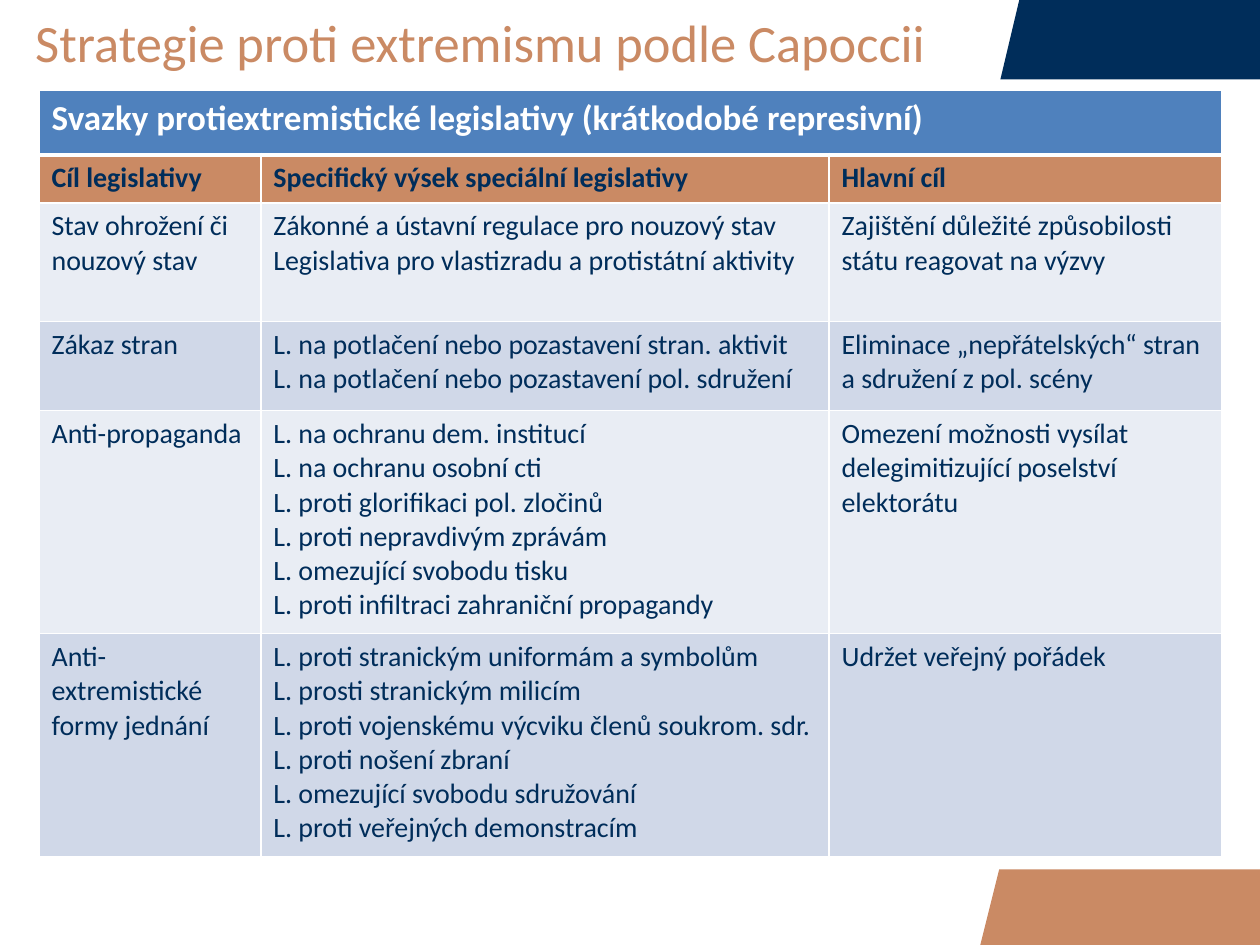
from dataclasses import dataclass

from lxml.etree import SubElement
from pptx import Presentation
from pptx.dml.color import RGBColor
from pptx.enum.text import MSO_ANCHOR as Anchor
from pptx.oxml.ns import qn
from pptx.util import Inches, Pt

FONT = "Calibri"
NAVY, COPPER, WHITE, BLUE = "002D5A", "CA8A64", "FFFFFF", "4F81BD"
BANDS = ("E9EDF4", "D0D8E8")
SLIDE_WIDTH, SLIDE_HEIGHT = 10, 7.5


@dataclass(frozen=True)
class CornerBand:
    left: float
    top: float
    height: float
    color: str
    slant: float = 0.15


@dataclass(frozen=True)
class TextStyle:
    size: float
    color: str
    bold: bool = False


@dataclass(frozen=True)
class LegislationRow:
    height: float
    target: str
    laws: tuple[str, ...]
    goal: str


CORNER_BANDS = (
    CornerBand(7.94, 0, 0.63, NAVY),
    CornerBand(7.78, 6.9, 0.6, COPPER),
)
TITLE_STYLE = TextStyle(30, COPPER)
BANNER_STYLE = TextStyle(20, WHITE, bold=True)
HEADING_STYLE = TextStyle(16, NAVY, bold=True)
BODY_STYLE = TextStyle(16, NAVY)

TITLE = "Strategie proti extremismu podle Capoccii"
BANNER = "Svazky protiextremistické legislativy (krátkodobé represivní)"
HEADINGS = ("Cíl legislativy", "Specifický výsek speciální legislativy", "Hlavní cíl")
COLUMN_WIDTHS = (1.76, 4.51, 3.12)
BANNER_HEIGHT, HEADING_HEIGHT = 0.51, 0.38
ROWS = (
    LegislationRow(
        0.94,
        "Stav ohrožení či nouzový stav",
        (
            "Zákonné a ústavní regulace pro nouzový stav",
            "Legislativa pro vlastizradu a protistátní aktivity",
        ),
        "Zajištění důležité způsobilosti státu reagovat na výzvy",
    ),
    LegislationRow(
        0.71,
        "Zákaz stran",
        (
            "L. na potlačení nebo pozastavení stran. aktivit",
            "L. na potlačení nebo pozastavení pol. sdružení",
        ),
        "Eliminace „nepřátelských“ stran a sdružení z pol. scény",
    ),
    LegislationRow(
        1.77,
        "Anti-propaganda",
        (
            "L. na ochranu dem. institucí",
            "L. na ochranu osobní cti",
            "L. proti glorifikaci pol. zločinů",
            "L. proti nepravdivým zprávám",
            "L. omezující svobodu tisku",
            "L. proti infiltraci zahraniční propagandy",
        ),
        "Omezení možnosti vysílat delegimitizující poselství elektorátu",
    ),
    LegislationRow(
        1.77,
        "Anti-extremistické formy jednání",
        (
            "L. proti stranickým uniformám a symbolům",
            "L. prosti stranickým milicím",
            "L. proti vojenskému výcviku členů soukrom. sdr.",
            "L. proti nošení zbraní",
            "L. omezující svobodu sdružování",
            "L. proti veřejných demonstracím",
        ),
        "Udržet veřejný pořádek",
    ),
)


def set_color(color_format, color: str) -> None:
    color_format.rgb = RGBColor.from_string(color)


def write_lines(text_frame, lines: tuple[str, ...], style: TextStyle) -> None:
    """Write one paragraph per line into an empty text frame."""
    for index, line in enumerate(lines):
        paragraph = text_frame.add_paragraph() if index else text_frame.paragraphs[0]
        run = paragraph.add_run()
        run.text = line
        run.font.name = FONT
        run.font.size = Pt(style.size)
        run.font.bold = style.bold
        set_color(run.font.color, style.color)


def draw_corner_band(slide, band: CornerBand) -> None:
    bottom = band.top + band.height
    builder = slide.shapes.build_freeform(Inches(band.left), Inches(bottom))
    corners = (
        (band.left + band.slant, band.top),
        (SLIDE_WIDTH, band.top),
        (SLIDE_WIDTH, bottom),
    )
    builder.add_line_segments([(Inches(x), Inches(y)) for x, y in corners])
    shape = builder.convert_to_shape()
    shape.shadow.inherit = False
    shape.fill.solid()
    set_color(shape.fill.fore_color, band.color)
    shape.line.fill.background()


def draw_title(slide) -> None:
    box = slide.shapes.add_textbox(0, 0, Inches(SLIDE_WIDTH), Inches(0.66))
    frame = box.text_frame
    frame.word_wrap = True
    frame.vertical_anchor = Anchor.MIDDLE
    frame.margin_left = frame.margin_right = Inches(0.28)
    write_lines(frame, (TITLE,), TITLE_STYLE)


def set_borders(cell, top: float = 1, bottom: float = 1) -> None:
    """Give the cell white borders; widths are in points."""
    properties = cell._tc.get_or_add_tcPr()
    for side, width in (("L", 1), ("R", 1), ("T", top), ("B", bottom)):
        line = SubElement(properties, qn(f"a:ln{side}"), w=str(Pt(width)))
        fill = SubElement(line, qn("a:solidFill"))
        SubElement(fill, qn("a:srgbClr"), val=WHITE)


def fill_cell(cell, color: str) -> None:
    cell.fill.solid()
    set_color(cell.fill.fore_color, color)


def draw_table(slide) -> None:
    heights = (BANNER_HEIGHT, HEADING_HEIGHT, *(row.height for row in ROWS))
    table = slide.shapes.add_table(
        len(heights), len(COLUMN_WIDTHS), Inches(0.31), Inches(0.72),
        Inches(sum(COLUMN_WIDTHS)), Inches(sum(heights)),
    ).table
    for column, width in zip(table.columns, COLUMN_WIDTHS):
        column.width = Inches(width)
    for row, height in zip(table.rows, heights):
        row.height = Inches(height)

    banner = table.cell(0, 0)
    banner.merge(table.cell(0, len(COLUMN_WIDTHS) - 1))
    write_lines(banner.text_frame, (BANNER,), BANNER_STYLE)
    for cell in table.rows[0].cells:
        set_borders(cell, bottom=3)
        fill_cell(cell, BLUE)

    for column, heading in enumerate(HEADINGS):
        cell = table.cell(1, column)
        set_borders(cell, top=3)
        fill_cell(cell, COPPER)
        write_lines(cell.text_frame, (heading,), HEADING_STYLE)

    for index, row in enumerate(ROWS):
        for column, lines in enumerate(((row.target,), row.laws, (row.goal,))):
            cell = table.cell(index + 2, column)
            set_borders(cell)
            fill_cell(cell, BANDS[index % 2])
            write_lines(cell.text_frame, lines, BODY_STYLE)


def main() -> None:
    presentation = Presentation()
    presentation.slide_width = Inches(SLIDE_WIDTH)
    presentation.slide_height = Inches(SLIDE_HEIGHT)
    slide = presentation.slides.add_slide(presentation.slide_layouts[6])
    for band in CORNER_BANDS:
        draw_corner_band(slide, band)
    draw_title(slide)
    draw_table(slide)
    presentation.save("out.pptx")


if __name__ == "__main__":
    main()
